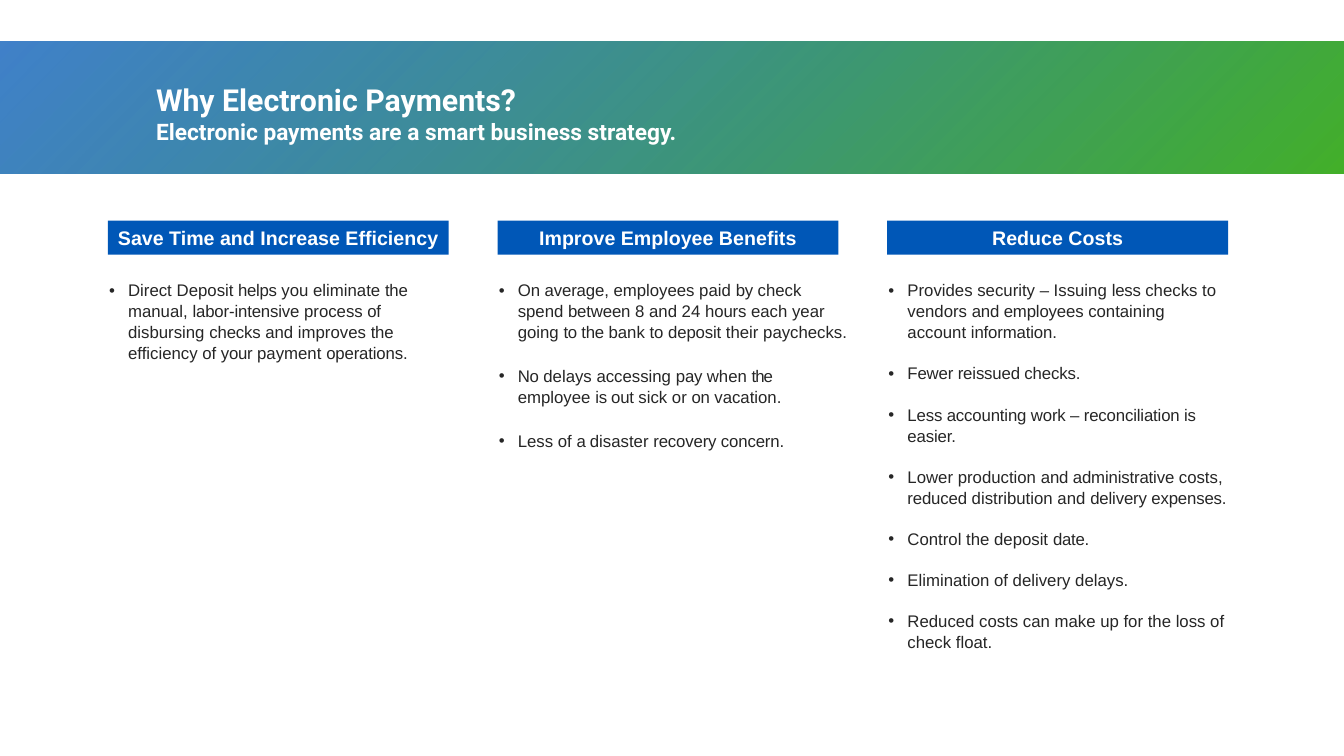
from dataclasses import dataclass

from lxml import etree
from pptx import Presentation
from pptx import util as u
from pptx.dml.color import RGBColor
from pptx.enum import shapes, text
from pptx.oxml import ns


@dataclass(frozen=True)
class Theme:
    blue: str = "0057B7"
    green: str = "43B02A"
    white: str = "FFFFFF"
    ink: str = "262626"
    title_font: str = "Roboto"
    body_font: str = "Arial"
    title_size: float = 21.6
    subtitle_size: float = 16.2
    heading_size: float = 14
    body_size: float = 12


SLIDE_WIDTH, SLIDE_HEIGHT = 33.87, 19.05
COLUMN_LEFT, COLUMN_STEP, COLUMN_WIDTH = 2.72, 9.82, 8.59
HEADING_TOP, HEADING_HEIGHT, BODY_TOP = 5.56, 0.86, 7.01

# Each column: heading, body width, body height, gap between bullets, bullets.
# Each bullet is a list of (text, letter spacing in points).
COLUMNS = [
    ("Save Time and Increase Efficiency", 8.59, 2.08, 0, [
        [("Direct ", 0), ("D", -0.6), ("eposit", 0), (" helps ", -0.2),
         ("you eliminate ", 0), ("the ", -0.2), ("manual, ", 0),
         ("labor-intensive ", -0.1), ("process", 0), (" of ", -0.2),
         ("disbursing ", 0), ("checks ", -0.1), ("and improves ", 0),
         ("the ", -0.2), ("efficiency of", 0), (" your ", -0.2),
         ("payment ", 0), ("operations.", -0.1)],
    ]),
    ("Improve Employee Benefits", 8.86, 4.29, 16.4, [
        [("On", 0), (" average, ", -0.1), ("employees paid ", 0),
         ("by ", -0.2), ("check spend", 0), (" between ", -0.1),
         ("8 and 24 ", 0), ("hours ", -0.1), ("each year going ", 0),
         ("to the ", -0.2), ("bank to", 0), (" deposit ", -0.1),
         ("their paychecks.", 0)],
        [("No ", -0.2), ("delays accessing ", 0), ("pay ", -0.2),
         ("when ", 0), ("the ", -0.7), ("employee ", 0), ("is out ", -0.2),
         ("sick or ", 0), ("on ", -0.2), ("vacation.", 0)],
        [("Less of ", 0), ("a ", -0.5), ("disaster ", 0),
         ("recovery concern.", -0.1)],
    ]),
    ("Reduce Costs", 8.59, 10.29, 14.4, [
        [("Provides security – Issuing ", 0), ("less ", -0.2),
         ("checks to vendors ", 0), ("and ", -0.2), ("employees ", -0.1),
         ("containing account ", 0), ("information.", -0.1)],
        [("Fewer reissued checks.", -0.1)],
        [("Less accounting work – reconciliation is easier.", -0.1)],
        [("Lower production ", 0), ("and ", -0.2), ("administrative ", -0.1),
         ("costs, ", 0), ("reduced ", -0.1), ("distribution and ", 0),
         ("delivery expenses.", -0.1)],
        [("Control the deposit ", 0), ("date.", -0.2)],
        [("Elimination of delivery delays.", 0)],
        [("Reduced costs can make up for the loss of check float.", 0)],
    ]),
]


def add_run(paragraph, content, *, font, size, color, bold=False, spacing=0):
    run = paragraph.add_run()
    run.text = content
    run.font.name = font
    run.font.size = u.Pt(size)
    run.font.bold = bold
    run.font.color.rgb = RGBColor.from_string(color)
    if spacing:
        run.font._element.set("spc", str(round(spacing * 100)))


class SlideBuilder:
    def __init__(self, slide, theme):
        self.slide = slide
        self.theme = theme

    def rectangle(self, left, top, width, height):
        shape = self.slide.shapes.add_shape(
            shapes.MSO_SHAPE.RECTANGLE,
            u.Cm(left), u.Cm(top), u.Cm(width), u.Cm(height))
        shape.shadow.inherit = False
        shape.line.fill.background()
        return shape

    def banner(self, top, height):
        shape = self.rectangle(0, top, SLIDE_WIDTH, height)
        shape.fill.gradient()
        inner, outer = shape.fill.gradient_stops
        inner.color.rgb = RGBColor.from_string(self.theme.green)
        outer.color.rgb = RGBColor.from_string(self.theme.blue)
        inner.position, outer.position = 0, 1

        # Translucent blue, spreading from the lower right corner
        gradient = shape._element.spPr.find(ns.qn("a:gradFill"))
        blue = gradient.findall(".//" + ns.qn("a:srgbClr"))[1]
        etree.SubElement(blue, ns.qn("a:alpha"), val="75000")
        circle = etree.Element(ns.qn("a:path"), path="circle")
        etree.SubElement(circle, ns.qn("a:fillToRect"), l="100000", t="100000")
        gradient.replace(gradient.find(ns.qn("a:lin")), circle)

        # The banner lies behind the title
        tree = self.slide.shapes._spTree
        tree.remove(shape._element)
        tree.insert(2, shape._element)

    def title(self, left, top, width, height, heading, subtitle):
        shape = self.slide.shapes.title
        shape.left, shape.top = u.Cm(left), u.Cm(top)
        shape.width, shape.height = u.Cm(width), u.Cm(height)
        frame = shape.text_frame
        frame.auto_size = text.MSO_AUTO_SIZE.NONE
        frame.vertical_anchor = text.MSO_ANCHOR.MIDDLE
        frame.word_wrap = True
        paragraph = frame.paragraphs[0]
        paragraph.alignment = text.PP_ALIGN.LEFT
        style = dict(font=self.theme.title_font, color=self.theme.white, bold=True)
        add_run(paragraph, heading, size=self.theme.title_size, **style)
        paragraph.add_line_break()
        add_run(paragraph, subtitle, size=self.theme.subtitle_size, **style)

    def heading(self, left, content):
        shape = self.rectangle(left, HEADING_TOP, COLUMN_WIDTH, HEADING_HEIGHT)
        shape.fill.solid()
        shape.fill.fore_color.rgb = RGBColor.from_string(self.theme.blue)
        frame = shape.text_frame
        frame.word_wrap = True
        frame.vertical_anchor = text.MSO_ANCHOR.MIDDLE
        paragraph = frame.paragraphs[0]
        paragraph.alignment = text.PP_ALIGN.CENTER
        add_run(paragraph, content, font=self.theme.body_font,
                size=self.theme.heading_size, color=self.theme.white, bold=True)

    def bullets(self, left, width, height, gap, items):
        shape = self.slide.shapes.add_textbox(
            u.Cm(left), u.Cm(BODY_TOP), u.Cm(width), u.Cm(height))
        frame = shape.text_frame
        frame.word_wrap = True
        frame.margin_left = frame.margin_right = frame.margin_bottom = 0
        frame.margin_top = u.Cm(0.03)
        for index, item in enumerate(items):
            paragraph = frame.add_paragraph() if index else frame.paragraphs[0]
            properties = paragraph._p.get_or_add_pPr()
            properties.set("marL", str(u.Cm(0.51)))
            properties.set("indent", str(u.Cm(-0.48)))
            etree.SubElement(properties, ns.qn("a:buFont"), typeface=self.theme.body_font)
            etree.SubElement(properties, ns.qn("a:buChar"), char="•")
            paragraph.line_spacing = 1.04
            if index:
                paragraph.space_before = u.Pt(gap)
            for content, spacing in item:
                add_run(paragraph, content, font=self.theme.body_font,
                        size=self.theme.body_size, color=self.theme.ink,
                        spacing=spacing)


def main():
    presentation = Presentation()
    presentation.slide_width = u.Cm(SLIDE_WIDTH)
    presentation.slide_height = u.Cm(SLIDE_HEIGHT)
    title_only = presentation.slide_layouts[5]
    builder = SlideBuilder(presentation.slides.add_slide(title_only), Theme())

    # Banner and title
    builder.banner(1.06, 3.31)
    builder.title(3.68, 2.1, 17.45, 1.5, "Why Electronic Payments?",
                  "Electronic payments are a smart business strategy.")

    # Three columns of benefits
    for index, (heading, width, height, gap, items) in enumerate(COLUMNS):
        left = COLUMN_LEFT + index * COLUMN_STEP
        builder.heading(left, heading)
        builder.bullets(left, width, height, gap, items)

    presentation.save("out.pptx")


if __name__ == "__main__":
    main()
